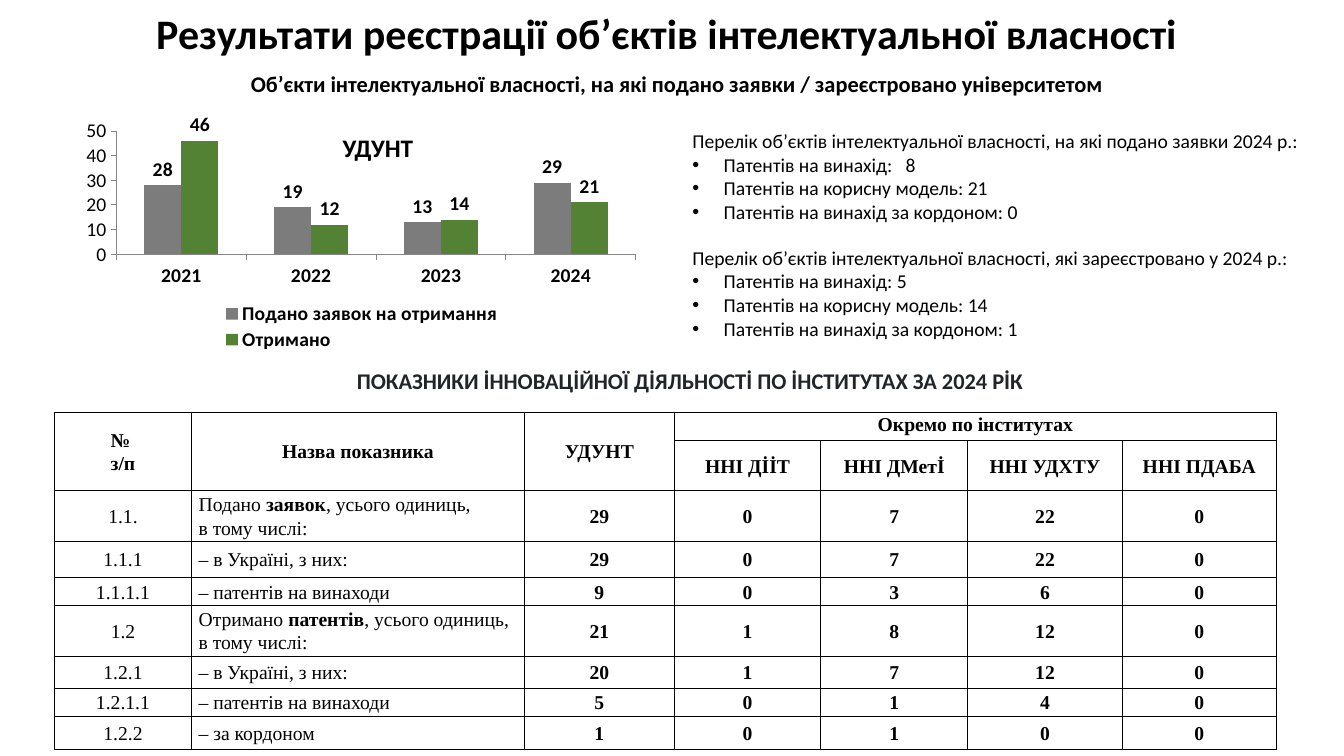
from dataclasses import dataclass

from lxml import etree
from pptx import Presentation
from pptx.chart.data import CategoryChartData
from pptx.dml.color import RGBColor
from pptx.enum.chart import XL_CHART_TYPE, XL_LABEL_POSITION, XL_LEGEND_POSITION, XL_TICK_MARK
from pptx.enum.text import MSO_ANCHOR, MSO_AUTO_SIZE, PP_ALIGN
from pptx.oxml import parse_xml
from pptx.oxml.ns import nsdecls, qn
from pptx.util import Inches, Pt

COLUMNS = XL_CHART_TYPE.COLUMN_CLUSTERED
LABEL_OUTSIDE = XL_LABEL_POSITION.OUTSIDE_END
LEGEND_BOTTOM = XL_LEGEND_POSITION.BOTTOM
TICK_OUTSIDE = XL_TICK_MARK.OUTSIDE
TOP, MIDDLE = MSO_ANCHOR.TOP, MSO_ANCHOR.MIDDLE
GROW = MSO_AUTO_SIZE.SHAPE_TO_FIT_TEXT
LEFT, CENTER = PP_ALIGN.LEFT, PP_ALIGN.CENTER


@dataclass(frozen=True)
class Theme:
    black: str = "000000"
    heading: str = "212529"
    axis: str = "868686"
    submitted: str = "7C7C7C"
    received: str = "548235"
    sans: str = "Calibri"
    serif: str = "Times New Roman"
    title: int = 30
    subtitle: int = 16
    chart_title: int = 18
    body: int = 14


THEME = Theme()

APPLICATIONS = [
    "Перелік об’єктів інтелектуальної власності, на які подано заявки 2024 р.:",
    "Патентів на винахід:   8",
    "Патентів на корисну модель: 21",
    "Патентів на винахід за кордоном: 0",
]
REGISTRATIONS = [
    "Перелік об’єктів інтелектуальної власності, які зареєстровано у 2024 р.:",
    "Патентів на винахід: 5",
    "Патентів на корисну модель: 14",
    "Патентів на винахід за кордоном: 1",
]

YEARS = ["2021", "2022", "2023", "2024"]
SERIES = [
    ("Подано заявок на отримання", [28, 19, 13, 29], THEME.submitted),
    ("Отримано", [46, 12, 14, 21], THEME.received),
]

COLUMN_WIDTHS = [1.36, 3.3, 1.49, 1.45, 1.46, 1.53, 1.53]
ROW_HEIGHTS = [0.28, 0.5, 0.5, 0.36, 0.28, 0.5, 0.32, 0.28, 0.33]
HEADER_ROWS = 2
# Double asterisks switch bold on and off
TABLE_ROWS = [
    ["№ \nз/п", "Назва показника", "УДУНТ", "Окремо по інститутах", "", "", ""],
    ["", "", "", "ННІ ДİİТ", "ННІ ДМетİ", "ННІ УДХТУ", "ННІ ПДАБА"],
    ["1.1.", "Подано **заявок**, усього одиниць,\nв тому числі:", 29, 0, 7, 22, 0],
    ["1.1.1", "– в Україні, з них:", 29, 0, 7, 22, 0],
    ["1.1.1.1", "– патентів на винаходи", 9, 0, 3, 6, 0],
    ["1.2", "Отримано **патентів**, усього одиниць,\nв тому числі:", 21, 1, 8, 12, 0],
    ["1.2.1", "– в Україні, з них:", 20, 1, 7, 12, 0],
    ["1.2.1.1", "– патентів на винаходи", 5, 0, 1, 4, 0],
    ["1.2.2", "– за кордоном", 1, 0, 1, 0, 0],
]


def style_font(font, size, bold=False, color=THEME.black, name=THEME.sans):
    font.name = name
    font.size = Pt(size)
    font.bold = bold
    font.color.rgb = RGBColor.from_string(color)


def write_text(frame, text, size=THEME.body, bold=False, color=THEME.black,
               name=THEME.sans, align=LEFT, spacing=None):
    for index, line in enumerate(text.split("\n")):
        paragraph = frame.paragraphs[0] if index == 0 else frame.add_paragraph()
        paragraph.alignment = align
        paragraph.line_spacing = spacing
        for part, segment in enumerate(line.split("**")):
            run = paragraph.add_run()
            run.text = segment
            style_font(run.font, size, bold or part % 2 == 1, color, name)


def add_text(slide, text, left, top, width, height, wrap=True, anchor=TOP, **text_format):
    box = slide.shapes.add_textbox(Inches(left), Inches(top), Inches(width), Inches(height))
    frame = box.text_frame
    frame.word_wrap = wrap
    frame.auto_size = GROW
    frame.vertical_anchor = anchor
    write_text(frame, text, **text_format)
    return frame


def add_patent_list(slide, lines, top, width):
    frame = add_text(slide, "\n".join(lines), 6.77, top, width, 1.04)
    for paragraph in frame.paragraphs[1:]:
        properties = paragraph._p.get_or_add_pPr()
        properties.set("marL", str(Inches(0.31)))
        properties.set("indent", str(-Inches(0.31)))
        etree.SubElement(properties, qn("a:buFont")).set("typeface", "Arial")
        etree.SubElement(properties, qn("a:buChar")).set("char", "•")


def manual_layout(x, y, width, height, inner=False):
    target = '<c:layoutTarget val="inner"/>' if inner else ""
    return parse_xml(
        f'<c:layout {nsdecls("c")}><c:manualLayout>{target}'
        '<c:xMode val="edge"/><c:yMode val="edge"/>'
        f'<c:x val="{x}"/><c:y val="{y}"/><c:w val="{width}"/><c:h val="{height}"/>'
        "</c:manualLayout></c:layout>")


def style_axis(axis, bold):
    axis.has_major_gridlines = False
    axis.major_tick_mark = TICK_OUTSIDE
    axis.format.line.color.rgb = RGBColor.from_string(THEME.axis)
    style_font(axis.tick_labels.font, THEME.body, bold)


def add_patent_chart(slide):
    data = CategoryChartData()
    data.categories = YEARS
    for name, values, _ in SERIES:
        data.add_series(name, values)
    chart = slide.shapes.add_chart(
        COLUMNS, Inches(0.76), Inches(1.12), Inches(5.66), Inches(2.41), data).chart
    chart.has_title = False
    style_font(chart.font, THEME.body)
    style_axis(chart.category_axis, bold=True)
    style_axis(chart.value_axis, bold=False)
    chart.value_axis.major_unit = 10

    plot = chart.plots[0]
    plot.gap_width = 150
    plot.overlap = 0
    plot.vary_by_categories = False
    for series, (_, _, color) in zip(plot.series, SERIES):
        series.format.fill.solid()
        series.format.fill.fore_color.rgb = RGBColor.from_string(color)
        labels = series.data_labels
        labels.show_value = True
        labels.position = LABEL_OUTSIDE
        style_font(labels.font, THEME.body, bold=True)

    chart.has_legend = True
    chart.legend.position = LEGEND_BOTTOM
    chart.legend.include_in_layout = False
    style_font(chart.legend.font, THEME.body, bold=True)

    # Fixed places for the plot and the two-line legend
    plot_area = chart._chartSpace.chart.plotArea
    for layout in plot_area.findall(qn("c:layout")):
        plot_area.remove(layout)
    plot_area.insert(0, manual_layout(0.07, 0.07, 0.91, 0.51, inner=True))
    legend = chart.legend._element
    for layout in legend.findall(qn("c:layout")):
        legend.remove(layout)
    legend.find(qn("c:legendPos")).addnext(manual_layout(0.25, 0.77, 0.5, 0.22))


def add_borders(cell):
    properties = cell._tc.get_or_add_tcPr()
    for side in "LRTB":
        properties.append(parse_xml(
            f'<a:ln{side} {nsdecls("a")} w="{Pt(1)}"><a:solidFill>'
            f'<a:srgbClr val="{THEME.black}"/></a:solidFill></a:ln{side}>'))


def fill_cell(cell, text, row, column):
    cell.margin_left = cell.margin_right = Inches(0.07)
    cell.margin_top = cell.margin_bottom = 0
    cell.vertical_anchor = TOP if (row, column) == (0, 3) else MIDDLE
    header = row < HEADER_ROWS
    write_text(cell.text_frame, str(text), name=THEME.serif, spacing=1.07,
               bold=header or column > 1,
               align=LEFT if column == 1 and not header else CENTER)
    add_borders(cell)
    cell.fill.background()


def add_indicator_table(slide):
    table = slide.shapes.add_table(
        len(ROW_HEIGHTS), len(COLUMN_WIDTHS), Inches(0.54), Inches(4.09),
        Inches(sum(COLUMN_WIDTHS)), Inches(sum(ROW_HEIGHTS))).table
    table.first_row = table.horz_banding = False
    for column, width in zip(table.columns, COLUMN_WIDTHS):
        column.width = Inches(width)
    for row, height in zip(table.rows, ROW_HEIGHTS):
        row.height = Inches(height)
    for row, values in enumerate(TABLE_ROWS):
        for column, value in enumerate(values):
            fill_cell(table.cell(row, column), value, row, column)
    for column in range(3):
        table.cell(0, column).merge(table.cell(1, column))
    table.cell(0, 3).merge(table.cell(0, 6))


def main():
    presentation = Presentation()
    presentation.slide_width, presentation.slide_height = Inches(13.33), Inches(7.5)
    slide = presentation.slides.add_slide(presentation.slide_layouts[6])

    # Headings
    add_text(slide, "Результати реєстрації об’єктів інтелектуальної власності",
             0.28, 0.03, 12.67, 0.61, size=THEME.title, bold=True, align=CENTER)
    add_text(slide, "Об’єкти інтелектуальної власності, на які подано заявки / "
             "зареєстровано університетом",
             0.6, 0.65, 12.23, 0.37, size=THEME.subtitle, bold=True, align=CENTER)

    # Lists and chart
    add_patent_list(slide, APPLICATIONS, 1.23, 6.26)
    add_patent_list(slide, REGISTRATIONS, 2.39, 6.56)
    add_patent_chart(slide)
    add_text(slide, "УДУНТ", 3.3, 1.26, 0.91, 0.4, wrap=False,
             size=THEME.chart_title, bold=True)

    # Table
    add_text(slide, "ПОКАЗНИКИ İННОВАЦİЙНОЇ ДİЯЛЬНОСТİ ПО İНСТИТУТАХ ЗА 2024 РİК",
             3.44, 3.59, 6.85, 0.37, wrap=False, anchor=MIDDLE,
             size=THEME.subtitle, bold=True, color=THEME.heading)
    add_indicator_table(slide)
    presentation.save("out.pptx")


if __name__ == "__main__":
    main()
